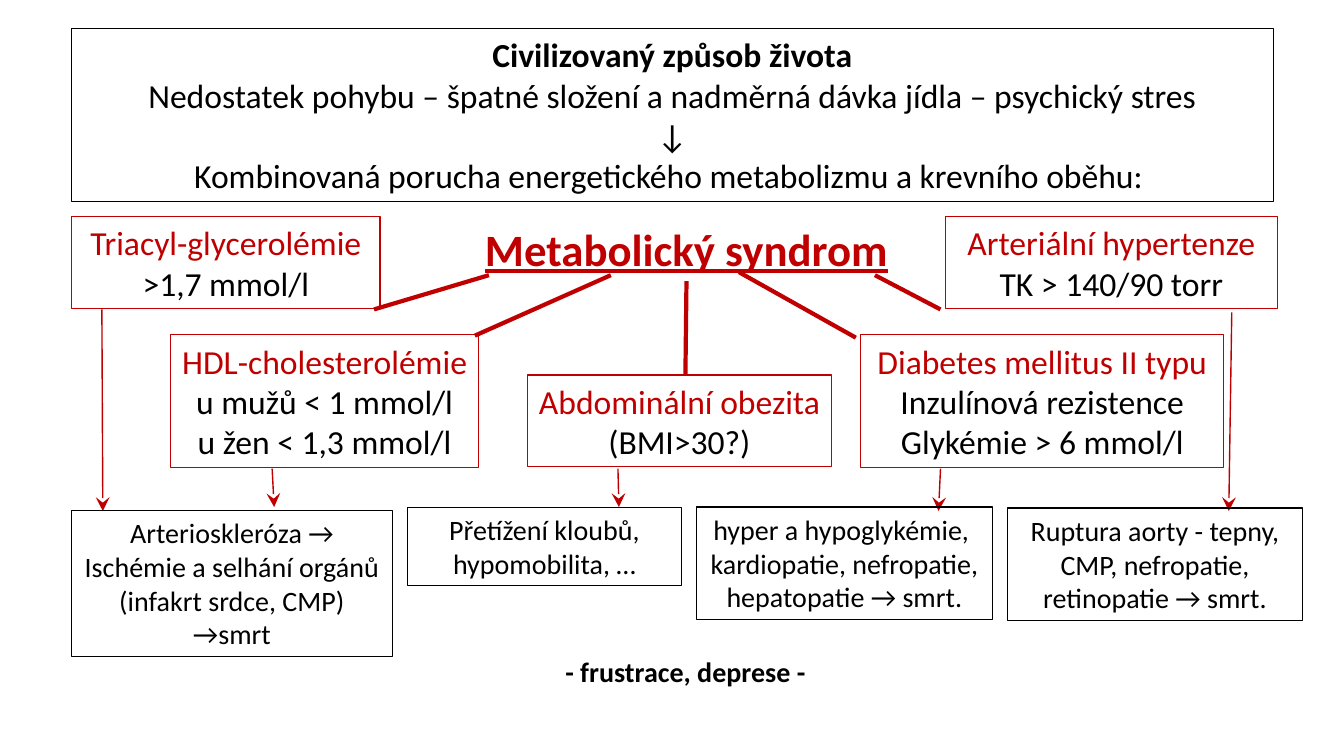
"""Build the slide on the metabolic syndrome, its components and outcomes."""
import pptx
import pptx.dml.color
import pptx.enum.shapes
import pptx.enum.text
import pptx.oxml.ns
import pptx.util
from lxml import etree

WIDTH, HEIGHT = 13.333, 7.5
COLUMN, ROW = WIDTH / 100, HEIGHT / 100
RED, BLACK = "C00000", "000000"
LEFT, GAP = 5.33, 1.13
LINE_HEIGHT, PADDING = 1.215, 0.1

LIFESTYLE = [
    "Civilizovaný způsob života",
    "Nedostatek pohybu – špatné složení a nadměrná dávka jídla – psychický stres",
    "↓",
    "Kombinovaná porucha energetického metabolizmu a krevního oběhu: ",
]
COMPONENTS = [
    (39.23, 49.6, 22.65, ["Abdominální obezita", "(BMI>30?)"]),
    (LEFT, 28.67, 22.95, ["Triacyl-glycerolémie", ">1,7 mmol/l"]),
    (12.68, 44.27, 22.95, ["HDL-cholesterolémie", "u mužů < 1 mmol/l", "u žen < 1,3 mmol/l"]),
    (64.05, 44.27, 27, ["Diabetes mellitus II typu", "Inzulínová rezistence", "Glykémie > 6 mmol/l"]),
    (70.35, 28.67, 24.68, ["Arteriální hypertenze", "TK > 140/90 torr"]),
]
OUTCOMES = [
    (67.47, 23.85, 4, ["Arterioskleróza →", "Ischémie a selhání orgánů", "(infakrt srdce, CMP)", "→smrt"]),
    (67.07, 20.4, 2, ["Přetížení kloubů, hypomobilita, …"]),
    (67.07, 21.98, 3, ["hyper a hypoglykémie, ", "kardiopatie, nefropatie, hepatopatie → smrt."]),
    (67.2, 21.98, 3, ["Ruptura aorty - tepny, CMP, nefropatie, retinopatie → smrt."]),
]
ARROWS = [
    (7.58, 40.93, 7.65, 67.6),
    (20.25, 62, 20.4, 67.07),
    (91.65, 41.33, 91.43, 67.6),
    (45.98, 62, 46.05, 67.07),
    (69.98, 62, 69.83, 67.6),
]
SPOKES = [
    (27.83, 40.93, 36.38, 36.4),
    (65.1, 36.4, 69.98, 40.93),
    (35.33, 44.4, 45.45, 36.4),
    (51, 49.6, 51.08, 37.2),
    (54.98, 36, 63.68, 44.67),
]


def color(value):
    return pptx.dml.color.RGBColor.from_string(value)


def across(columns):
    return pptx.util.Inches(columns * COLUMN)


def down(rows):
    return pptx.util.Inches(rows * ROW)


def add_text(slide, left, top, width, lines, size, outline=None, first=BLACK, rows=None):
    height = PADDING + (rows or len(lines)) * size * LINE_HEIGHT / 72
    place = across(left), down(top), across(width), pptx.util.Inches(height)
    if outline:
        shape = slide.shapes.add_shape(pptx.enum.shapes.MSO_SHAPE.RECTANGLE, *place)
        shape.shadow.inherit = False
        shape.fill.background()
        shape.line.color.rgb = color(outline)
        shape.line.width = pptx.util.Pt(0.75)
    else:
        shape = slide.shapes.add_textbox(*place)
    frame = shape.text_frame
    frame.text = "\n".join(lines)
    frame.word_wrap = rows is not None
    frame.auto_size = pptx.enum.text.MSO_AUTO_SIZE.SHAPE_TO_FIT_TEXT
    for index, paragraph in enumerate(frame.paragraphs):
        paragraph.alignment = pptx.enum.text.PP_ALIGN.CENTER
        paragraph.font.name = "Calibri"
        paragraph.font.size = pptx.util.Pt(size)
        paragraph.font.color.rgb = color(BLACK if index else first)
    return frame.paragraphs[0].font


def add_line(slide, ends, weight, arrow=False):
    x1, y1, x2, y2 = ends
    connector = slide.shapes.add_connector(
        pptx.enum.shapes.MSO_CONNECTOR.STRAIGHT, across(x1), down(y1), across(x2), down(y2))
    connector.line.color.rgb = color(RED)
    connector.line.width = pptx.util.Pt(weight)
    if arrow:
        tail = etree.SubElement(connector.line._get_or_add_ln(), pptx.oxml.ns.qn("a:tailEnd"))
        tail.set("type", "stealth")
        tail.set("w", "lg")
        tail.set("len", "lg")
    etree.SubElement(connector._element.spPr, pptx.oxml.ns.qn("a:effectLst"))


def main():
    presentation = pptx.Presentation()
    presentation.slide_width = pptx.util.Inches(WIDTH)
    presentation.slide_height = pptx.util.Inches(HEIGHT)
    slide = presentation.slides.add_slide(presentation.slide_layouts[6])

    title = add_text(slide, 35.25, 28.67, 31.65, ["Metabolický syndrom"], 32, first=RED)
    title.bold = title.underline = True
    for left, top, width, lines in COMPONENTS:
        add_text(slide, left, top, width, lines, 24, RED, RED)
    add_text(slide, LEFT, 3.73, 89.4, LIFESTYLE, 24, BLACK).bold = True

    for ends in ARROWS:
        add_line(slide, ends, 1, arrow=True)
    for ends in SPOKES:
        add_line(slide, ends, 3)

    left = LEFT
    for top, width, rows, lines in OUTCOMES:
        add_text(slide, left, top, width, lines, 20, BLACK, rows=rows)
        left += width + GAP
    add_text(slide, 39.68, 85.87, 22.65, ["- frustrace, deprese -"], 20).bold = True
    presentation.save("out.pptx")


if __name__ == "__main__":
    main()
